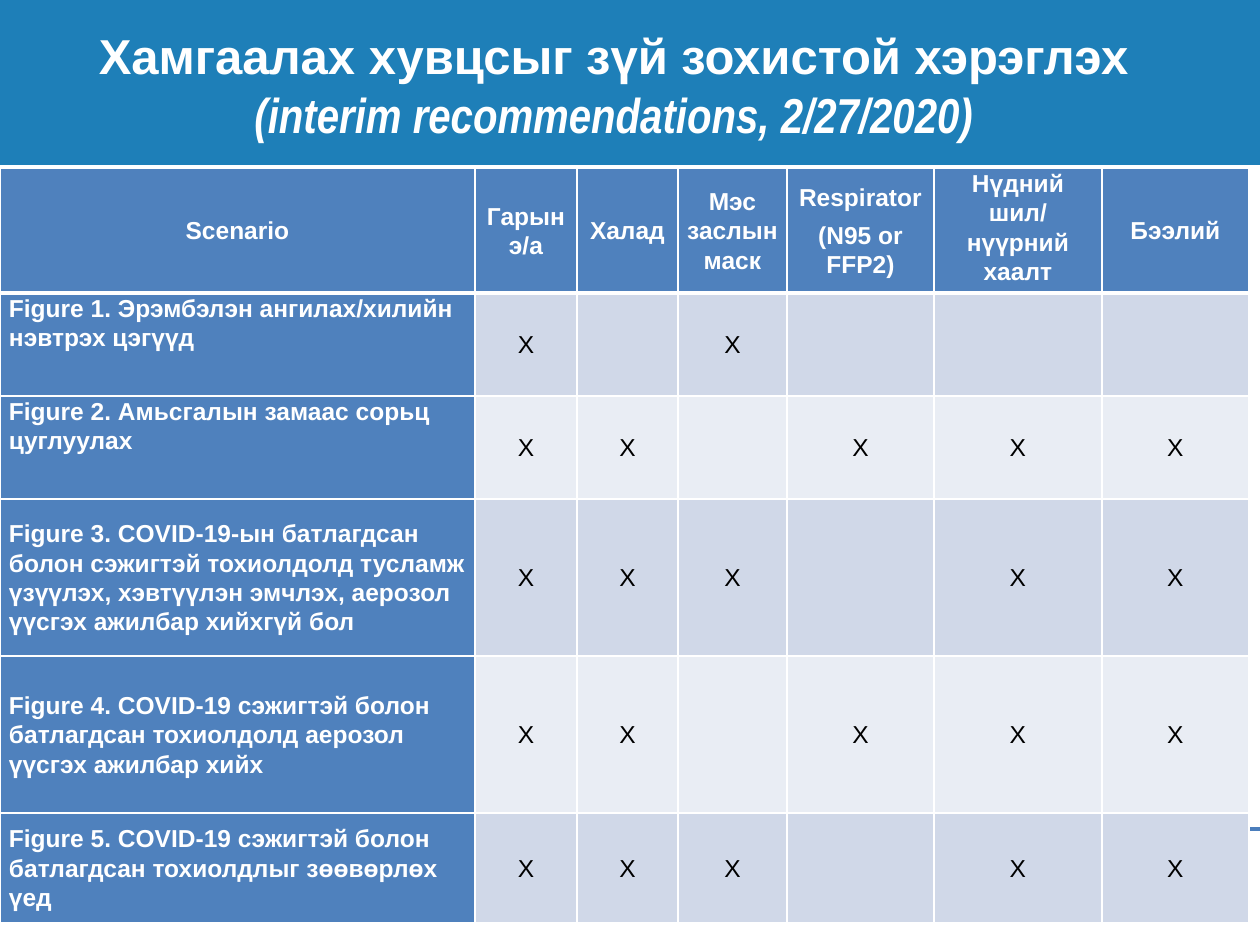
from dataclasses import dataclass
from typing import NamedTuple

from lxml import etree
from pptx import Presentation
from pptx.dml.color import RGBColor
from pptx.enum.shapes import MSO_CONNECTOR, MSO_SHAPE
from pptx.enum.text import MSO_ANCHOR, MSO_AUTO_SIZE, PP_ALIGN
from pptx.oxml import parse_xml
from pptx.oxml.ns import nsdecls, qn
from pptx.util import Pt

STRAIGHT = MSO_CONNECTOR.STRAIGHT
RECTANGLE = MSO_SHAPE.RECTANGLE
TOP, MIDDLE = MSO_ANCHOR.TOP, MSO_ANCHOR.MIDDLE
LEFT, CENTER = PP_ALIGN.LEFT, PP_ALIGN.CENTER
EMU_PER_PX = 914400 / 126


@dataclass(frozen=True)
class Theme:
    band: str = "1E7FB8"
    header: str = "4F81BD"
    stripes: tuple[str, str] = ("D0D8E8", "E9EDF4")
    rule: str = "4B7EBC"
    light: str = "FFFFFF"
    dark: str = "000000"
    font: str = "Arial"
    narrow: str = "Arial Narrow"
    title_size: int = 28
    table_size: int = 14


class Heading(NamedTuple):
    text: str
    width: int
    anchor: MSO_ANCHOR = MIDDLE


class Scenario(NamedTuple):
    text: str
    marks: str
    height: int
    anchor: MSO_ANCHOR = MIDDLE


THEME = Theme()
HEADER_HEIGHT = 125
TITLE = "Хамгаалах хувцсыг зүй зохистой хэрэглэх"
SUBTITLE = "(interim recommendations, 2/27/2020)"
HEADINGS = [
    Heading("Scenario", 475),
    Heading("Гарын э/а", 102),
    Heading("Халад", 101),
    Heading("Мэс заслын маск", 109),
    Heading("Respirator\n(N95 or FFP2)", 147),
    Heading("Нүдний шил/ нүүрний хаалт", 168, TOP),
    Heading("Бээлий", 147),
]
# One character per protective item: X required, - not required
SCENARIOS = [
    Scenario("Figure 1. Эрэмбэлэн ангилах/хилийн нэвтрэх цэгүүд",
             "X-X---", 103, TOP),
    Scenario("Figure 2. Амьсгалын замаас сорьц цуглуулах", "XX-XXX", 103, TOP),
    Scenario("Figure 3. COVID-19-ын батлагдсан болон сэжигтэй тохиолдолд тусламж "
             "үзүүлэх, хэвтүүлэн эмчлэх, аерозол үүсгэх ажилбар хийхгүй бол",
             "XXX-XX", 157),
    Scenario("Figure 4. COVID-19 сэжигтэй болон батлагдсан тохиолдолд аерозол "
             "үүсгэх ажилбар хийх", "XX-XXX", 157),
    Scenario("Figure 5. COVID-19 сэжигтэй болон батлагдсан тохиолдлыг "
             "зөөвөрлөх үед", "XXX-XX", 110),
]


def px(n: int) -> int:
    return round(n * EMU_PER_PX)


def rgb(color: str) -> RGBColor:
    return RGBColor.from_string(color)


def style_font(p, name: str, size: int, color: str, bold: bool = True) -> None:
    p.font.name = name
    p.font.size = Pt(size)
    p.font.bold = bold
    p.font.color.rgb = rgb(color)


def set_borders(cell, top: int = 1, bottom: int = 1) -> None:
    """Give the cell white borders, with widths in points."""
    tc_pr = cell._tc.get_or_add_tcPr()
    widths = {"lnL": 1, "lnR": 1, "lnT": top, "lnB": bottom}
    for i, (tag, width) in enumerate(widths.items()):
        tc_pr.insert(i, parse_xml(
            f'<a:{tag} {nsdecls("a")} w="{Pt(width)}"><a:solidFill>'
            f'<a:srgbClr val="{THEME.light}"/></a:solidFill></a:{tag}>'))


def fill_cell(cell, text: str, fill: str, color: str = THEME.light,
              bold: bool = True, align: PP_ALIGN = CENTER,
              anchor: MSO_ANCHOR = MIDDLE) -> None:
    cell.fill.solid()
    cell.fill.fore_color.rgb = rgb(fill)
    cell.margin_left = cell.margin_right = px(9)
    cell.margin_top = cell.margin_bottom = 0
    cell.vertical_anchor = anchor
    cell.text = text
    for i, p in enumerate(cell.text_frame.paragraphs):
        p.alignment = align
        p.line_spacing = 1.07
        if i:
            p.space_before = Pt(5)
        style_font(p, THEME.font, THEME.table_size, color, bold)


def add_background(slide) -> None:
    band = slide.shapes.add_shape(RECTANGLE, 0, 0, px(1260), px(165))
    band.shadow.inherit = False
    band.fill.solid()
    band.fill.fore_color.rgb = rgb(THEME.band)
    band.line.fill.background()
    slide.shapes.title.element.addprevious(band.element)

    rule = slide.shapes.add_connector(STRAIGHT, 0, px(829), px(1260), px(829))
    rule.line.color.rgb = rgb(THEME.rule)
    rule.line.width = Pt(2)
    etree.SubElement(rule.element.spPr, qn("a:effectLst"))


def add_title(slide) -> None:
    sp = slide.shapes.title
    sp.left, sp.top, sp.width, sp.height = px(10), px(32), px(1207), px(105)
    tf = sp.text_frame
    tf.text = f"{TITLE}\n{SUBTITLE}"
    tf.auto_size = MSO_AUTO_SIZE.NONE
    tf.vertical_anchor = MIDDLE
    for p, name in zip(tf.paragraphs, (THEME.font, THEME.narrow)):
        p.alignment = CENTER
        style_font(p, name, THEME.title_size, THEME.light)
    tf.paragraphs[1].font.italic = True


def add_scenario_table(slide) -> None:
    heights = [HEADER_HEIGHT] + [s.height for s in SCENARIOS]
    widths = [h.width for h in HEADINGS]
    table = slide.shapes.add_table(
        len(heights), len(widths), 0, px(168),
        px(sum(widths)), px(sum(heights))).table
    table.first_row = table.horz_banding = False
    for row, height in zip(table.rows, heights):
        row.height = px(height)
    for column, width in zip(table.columns, widths):
        column.width = px(width)

    for c, heading in enumerate(HEADINGS):
        cell = table.cell(0, c)
        fill_cell(cell, heading.text, THEME.header, anchor=heading.anchor)
        set_borders(cell, bottom=3)
    for r, scenario in enumerate(SCENARIOS, start=1):
        fill_cell(table.cell(r, 0), scenario.text, THEME.header,
                  align=LEFT, anchor=scenario.anchor)
        stripe = THEME.stripes[(r - 1) % 2]
        for c, mark in enumerate(scenario.marks, start=1):
            fill_cell(table.cell(r, c), mark.replace("-", ""), stripe,
                      THEME.dark, bold=False)
        for c in range(len(HEADINGS)):
            set_borders(table.cell(r, c), top=3 if r == 1 else 1)


def main() -> None:
    prs = Presentation()
    prs.slide_width, prs.slide_height = px(1260), px(945)
    slide = prs.slides.add_slide(prs.slide_layouts[5])
    add_background(slide)
    add_title(slide)
    add_scenario_table(slide)
    prs.save("out.pptx")


if __name__ == "__main__":
    main()
